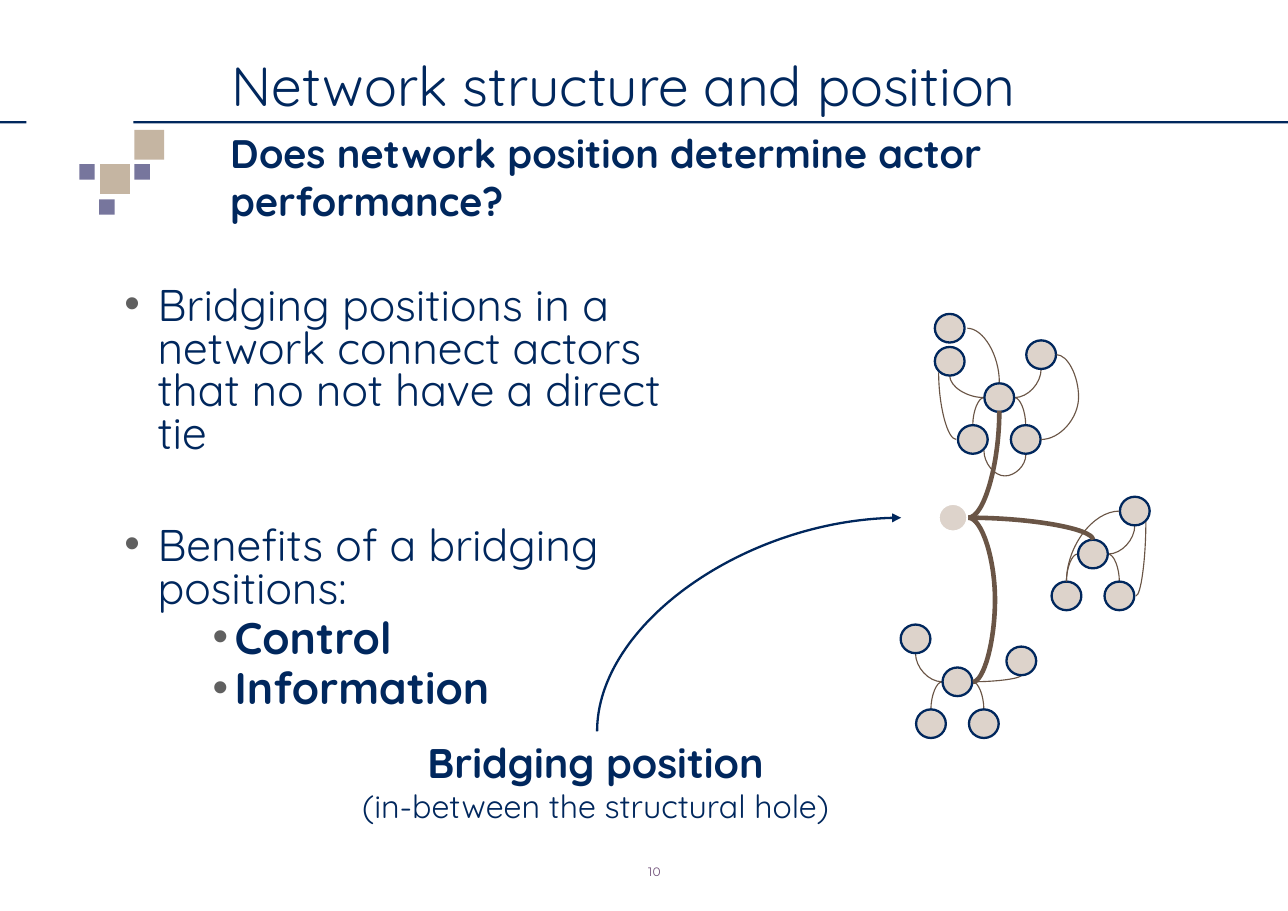
from pptx import Presentation
from pptx.dml.color import RGBColor
from pptx.enum.shapes import MSO_CONNECTOR as Link, MSO_SHAPE as Preset
from pptx.enum.text import MSO_ANCHOR as Anchor, MSO_AUTO_SIZE as AutoSize, PP_ALIGN as Align
from pptx.oxml.ns import qn
from pptx.util import Inches, Pt
from lxml.etree import SubElement

NAVY, BROWN, SAND, TAN, VIOLET = "00275D", "6A5546", "DDD3CB", "C5B5A2", "77769D"
NODE_WIDTH, NODE_HEIGHT = 0.27, 0.26
HUB_SIDE, NODE_END = 0.14, 0.13
FEET = [(-0.24, 0.38), (0.24, 0.38)]
CLUSTERS = [
    (9.07, 3.61, FEET + [(0.38, -0.39), (-0.45, -0.33)]),
    (9.92, 5.03, FEET + [(0.38, -0.39)]),
    (8.69, 6.19, FEET + [(-0.38, -0.39), (0.58, -0.19)]),
]
OUTER_TIES = [
    ((8.78, 2.98), (9.07, 3.47)),
    ((8.68, 3.99), (8.52, 3.38)),
    ((10.16, 4.64), (9.68, 5.28)),
    ((10.31, 5.41), (10.4, 4.74)),
]
RULES = [(0, 1.1, 0.24, 0.02), (1.21, 1.1, 10.48, 0.02)]
LARGE_SQUARES = [(1.22, 1.18), (0.91, 1.49)]
SMALL_SQUARES = [(0.72, 1.49), (0.9, 1.81), (1.22, 1.49)]


def color(value):
    return RGBColor.from_string(value)


def set_all(target, values):
    for name, value in values.items():
        setattr(target, name, value)


def place(box, left, top, width, height):
    set_all(box, {"left": Inches(left), "top": Inches(top),
                  "width": Inches(width), "height": Inches(height)})


def set_frame(box, side=0.08, end=0.04, **values):
    set_all(box.text_frame, {
        "word_wrap": True, "auto_size": AutoSize.NONE, "vertical_anchor": Anchor.TOP,
        "margin_left": Inches(side), "margin_right": Inches(side),
        "margin_top": Inches(end), "margin_bottom": Inches(end), **values})


def write(para, text, size, bold=False, font="Quicksand", fill=NAVY, **layout):
    set_all(para, layout)
    span = para.add_run()
    span.text = text
    set_all(span.font, {"name": font, "size": Pt(size), "bold": bold})
    span.font.color.rgb = color(fill)


def add_text(page, place_at, lines, frame, **layout):
    box = page.shapes.add_textbox(*map(Inches, place_at))
    set_frame(box, **frame)
    for index, (text, style) in enumerate(lines):
        paras = box.text_frame
        para = paras.add_paragraph() if index else paras.paragraphs[0]
        write(para, text, **style, **layout)


def add_bullet(para, margin, hang):
    properties = para._p.get_or_add_pPr()
    properties.set("marL", str(Inches(margin)))
    properties.set("indent", str(-Inches(hang)))
    tint = SubElement(properties, qn("a:buClr"))
    SubElement(tint, qn("a:srgbClr"), val="606060")
    SubElement(properties, qn("a:buFont"), typeface="Arial")
    SubElement(properties, qn("a:buChar"), char="•")


def fill_list(box, place_at, items):
    place(box, *place_at)
    set_frame(box)
    for index, (text, level) in enumerate(items):
        paras = box.text_frame
        para = paras.add_paragraph() if index else paras.paragraphs[0]
        add_bullet(para, *((1, 0.2) if level else (0.3, 0.3)))
        write(para, text, 29, bold=level > 0, level=level, line_spacing=0.8,
              space_before=Pt(5 if index else 0))


def add_filled(page, preset, place_at, fill, outline=None, width=1.5):
    shape = page.shapes.add_shape(preset, *map(Inches, place_at))
    shape.shadow.inherit = False
    shape.fill.solid()
    shape.fill.fore_color.rgb = color(fill)
    if outline:
        shape.line.color.rgb = color(outline)
        shape.line.width = Pt(width)
    else:
        shape.line.fill.background()


def add_node(page, x, y, **line):
    place_at = (x - NODE_WIDTH / 2, y - NODE_HEIGHT / 2, NODE_WIDTH, NODE_HEIGHT)
    add_filled(page, Preset.OVAL, place_at, SAND, **{"outline": NAVY, **line})


def add_curve(page, start, end, width=0.75, line=BROWN, bend=None, turn=0, arrow=False):
    curve = page.shapes.add_connector(Link.CURVE, *map(Inches, start + end))
    curve.line.color.rgb = color(line)
    curve.line.width = Pt(width)
    outline = curve.element.spPr
    geometry = outline.find(qn("a:prstGeom"))
    if bend is None:
        geometry.set("prst", "curvedConnector2")
    else:
        ratio = (bend - start[0]) / (end[0] - start[0])
        SubElement(geometry.find(qn("a:avLst")), qn("a:gd"), name="adj1",
                   fmla=f"val {round(ratio * 100000)}")
    if turn:
        outline.find(qn("a:xfrm")).set("rot", str(turn * 60000))
    if arrow:
        SubElement(outline.find(qn("a:ln")), qn("a:headEnd"), type="triangle")
    SubElement(outline, qn("a:effectLst"))


def add_cluster(page, x, y, satellites):
    for dx, dy in satellites:
        side = HUB_SIDE if dx > 0 else -HUB_SIDE
        near_end = dy - NODE_END if dy > 0 else dy + NODE_END
        add_curve(page, (x + side, y), (x + dx, y + near_end))
    for dx, dy in [(0, 0)] + satellites:
        add_node(page, x + dx, y + dy)


def add_network(page):
    for cluster in CLUSTERS:
        add_cluster(page, *cluster)
    add_node(page, 8.62, 2.98)
    for start, end in OUTER_TIES:
        add_curve(page, start, end)
    add_curve(page, (9.14, 3.92), (9.1, 4.3), bend=8.91, turn=270)
    add_curve(page, (9.59, 3.22), (9.45, 3.99), bend=9.79)
    add_node(page, 8.65, 4.7, outline="FFFFFF", width=2)
    bridge = (8.79, 4.7)
    add_curve(page, bridge, (9.92, 4.9), width=3)
    add_curve(page, bridge, (8.83, 6.19), width=3, bend=9.03)
    add_curve(page, bridge, (9.07, 3.73), width=3)


def add_decoration(page):
    for rule in RULES:
        add_filled(page, Preset.RECTANGLE, rule, NAVY)
    for corners, side, fill in [(LARGE_SQUARES, 0.27, TAN), (SMALL_SQUARES, 0.14, VIOLET)]:
        for left, top in corners:
            add_filled(page, Preset.RECTANGLE, (left, top, side, side), fill)


def main():
    deck = Presentation()
    set_all(deck, {"slide_width": Inches(11.69), "slide_height": Inches(8.27)})
    page = deck.slides.add_slide(deck.slide_layouts[3])
    title, positions, benefits = page.placeholders

    add_decoration(page)
    add_text(page, (4.85, 7.8, 2.18, 0.25),
             [("10", {"size": 8, "font": "Montserrat", "fill": "72537B"})],
             {"side": 0, "end": 0, "vertical_anchor": Anchor.MIDDLE},
             alignment=Align.CENTER, line_spacing=0.7)

    place(title, 2.02, 0.43, 9.19, 0.7)
    set_frame(title)
    write(title.text_frame.paragraphs[0], "Network structure and position", 36,
          alignment=Align.LEFT)
    add_text(page, (2.01, 1.13, 9.19, 0.7),
             [("Does network position determine actor performance?",
               {"size": 26, "bold": True})], {})

    fill_list(positions, (1.05, 2.57, 5.34, 1.87), [
        ("Bridging positions in a network connect actors that no not have a direct tie", 0)])
    fill_list(benefits, (1.05, 4.75, 5.34, 1.89), [
        ("Benefits of a bridging positions:", 0), ("Control", 1), ("Information", 1)])

    add_network(page)
    add_text(page, (3.06, 6.64, 4.69, 0.91),
             [("Bridging position", {"size": 27, "bold": True}),
              ("(in-between the structural hole)", {"size": 21})],
             {"side": 0.1, "end": 0.05, "word_wrap": False}, alignment=Align.CENTER)
    add_curve(page, (8.18, 4.7), (5.42, 6.64), width=1.5, line=NAVY, arrow=True)
    deck.save("out.pptx")


if __name__ == "__main__":
    main()
